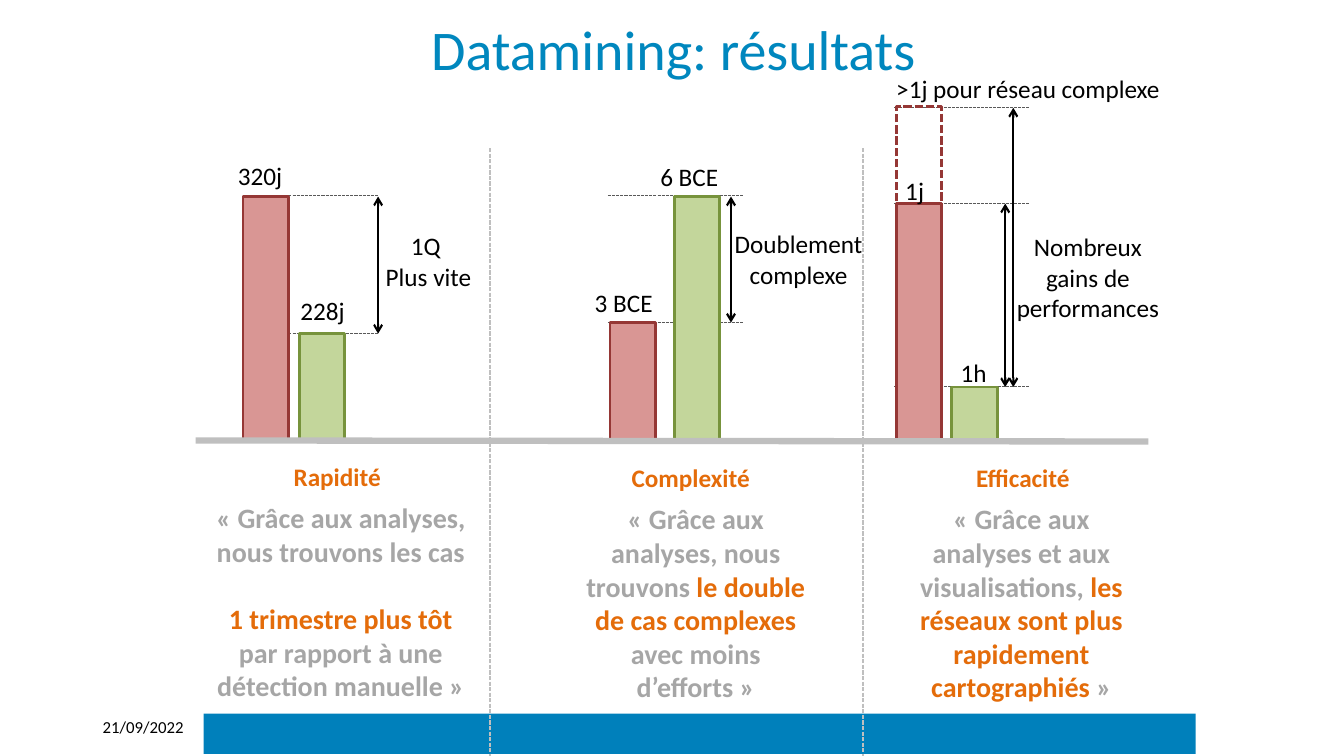
from lxml.etree import SubElement
from pptx import Presentation
from pptx.dml.color import RGBColor
from pptx.enum.dml import MSO_LINE
from pptx.enum.shapes import MSO_CONNECTOR, MSO_SHAPE
from pptx.enum.text import MSO_ANCHOR, MSO_AUTO_SIZE, PP_ALIGN
from pptx.oxml.ns import qn
from pptx.util import Inches, Pt

COLORS = {
    "title": "0087BE", "band": "0080BB", "text": "000000", "accent": "E46C0A",
    "quote": "A6A6A6", "rule": "BFBFBF", "guide": "595959",
    "before": "D99694", "before_edge": "953735",
    "after": "C3D69B", "after_edge": "77933C",
}
CELL = 0.1  # inches per grid column and row
BASE, BAR_WIDTH = 43.7, 4.5
GUIDE_WIDTH = 13.4


def color(name):
    return RGBColor.from_string(COLORS[name])


class ResultsSlide:
    """Draws on one slide; every length is in grid columns and rows."""

    def __init__(self, deck):
        self.slide = deck.slides.add_slide(deck.slide_layouts[6])
        self.font = "Calibri"

    def units(self, *lengths):
        return [Inches(length * CELL) for length in lengths]

    def rect(self, left, top, width, height, fill=None, edge=None, dashed=False):
        shape = self.slide.shapes.add_shape(
            MSO_SHAPE.RECTANGLE, *self.units(left, top, width, height))
        shape.shadow.inherit = False
        if fill:
            shape.fill.solid()
            shape.fill.fore_color.rgb = color(fill)
        else:
            shape.fill.background()
        if edge:
            shape.line.color.rgb = color(edge)
            shape.line.width = Pt(2)
            if dashed:
                shape.line.dash_style = MSO_LINE.SQUARE_DOT
        else:
            shape.line.fill.background()

    def bar(self, kind, left, top):
        self.rect(left, top, BAR_WIDTH, BASE - top, kind, f"{kind}_edge")

    def line(self, start, end, stroke, width, dashed=False, arrows=False):
        connector = self.slide.shapes.add_connector(
            MSO_CONNECTOR.STRAIGHT, *self.units(*start, *end))
        connector.line.color.rgb = color(stroke)
        connector.line.width = Pt(width)
        if dashed:
            connector.line.dash_style = MSO_LINE.SQUARE_DOT
        properties = connector.element.spPr
        if arrows:
            outline = properties.find(qn("a:ln"))
            for tip in ("a:headEnd", "a:tailEnd"):
                SubElement(outline, qn(tip), type="arrow")
        SubElement(properties, qn("a:effectLst"))

    def guide(self, left, top):
        self.line((left, top), (left + GUIDE_WIDTH, top), "guide", 0.75, dashed=True)

    def gap_arrow(self, column, top, bottom):
        self.line((column, top), (column, bottom), "text", 1.5, arrows=True)

    def text(self, box, paragraphs, size=18, ink="text", bold=False, wrap=False,
             align=PP_ALIGN.CENTER, anchor=MSO_ANCHOR.TOP, grow=True, gap=0):
        """Write paragraphs, each a string or a list of (text, colour) runs."""
        frame = self.slide.shapes.add_textbox(*self.units(*box)).text_frame
        frame.word_wrap = wrap
        frame.vertical_anchor = anchor
        frame.auto_size = MSO_AUTO_SIZE.SHAPE_TO_FIT_TEXT if grow else MSO_AUTO_SIZE.NONE
        for index, content in enumerate(paragraphs):
            paragraph = frame.add_paragraph() if index else frame.paragraphs[0]
            paragraph.alignment = align
            if index and gap:
                paragraph.space_before = Pt(gap)
            font = paragraph.font
            font.name, font.size, font.bold = self.font, Pt(size), bold
            if isinstance(content, str):
                font.color.rgb = color(ink)
                paragraph.add_run().text = content
                continue
            for words, run_ink in content:
                run = paragraph.add_run()
                run.text = words
                run.font.color.rgb = color(run_ink)


# kind, bar left and top, value, value box left, top and width
BARS = [
    ("before", 24.1, 19.5, "320j", 22.6, 15.4, 6.5),
    ("after", 29.7, 33.1, "228j", 28.8, 28.8, 6.5),
    ("before", 60.5, 32, "3 BCE", 58, 28, 7.8),
    ("after", 66.9, 19.5, "6 BCE", 64.5, 15.5, 7.8),
    ("before", 88.9, 20.2, "1j", 88.8, 16.9, 3.9),
    ("after", 94.4, 38.4, "1h", 94.3, 35, 4.6),
]
GUIDES = [(24.1, 19.4), (24.1, 33.1), (60.3, 19.4), (60.3, 32),
          (88.7, 10.7), (88.7, 20.2), (88.7, 38.3)]
GAP_ARROWS = [(37.5, 19.5, 33.1), (72.5, 19.5, 32),
              (99.7, 20.2, 38.4), (100.5, 10.7, 38.4)]
GAINS = [
    ((37.2, 22.4, 10.6, 7.1), ["1Q ", "Plus vite"], False),
    ((71.6, 22.2, 15.2, 7.1), ["Doublement", "complexe"], True),
    ((99.5, 22.5, 16.8, 10.1), ["Nombreux gains de performances"], True),
]
THEMES = [
    ("Rapidité", (28.1, 45.3, 10.7, 4), (20.4, 49.2, 26.8, 17.8), [
        "«\u00a0Grâce aux analyses, nous trouvons les cas",
        [("1 trimestre plus tôt ", "accent"),
         ("par rapport à une détection manuelle\u00a0»", "quote")]]),
    ("Complexité", (61.6, 45.4, 13.8, 4), (56.4, 49.3, 25.2, 21.2), [
        [("«\u00a0Grâce aux analyses, nous trouvons ", "quote"),
         ("le double de cas complexes ", "accent"),
         ("avec moins d’efforts\u00a0»", "quote")]]),
    ("Efficacité", (95.7, 45.4, 11.5, 4), (88.7, 49.3, 25.2, 21.2), [
        [("«\u00a0Grâce aux analyses et aux visualisations, ", "quote"),
         ("les réseaux sont plus rapidement cartographiés", "accent"),
         ("\u00a0»", "quote")]]),
]


def main():
    deck = Presentation()
    deck.slide_width, deck.slide_height = Inches(13.33), Inches(7.5)
    results = ResultsSlide(deck)

    results.rect(20.2, 70.8, 98.4, 4, "band")
    results.text((21.8, -0.3, 90, 10.1), ["Datamining: résultats"], 40, "title",
                 wrap=True, anchor=MSO_ANCHOR.MIDDLE, grow=False)
    for left, top in GUIDES:
        results.guide(left, top)
    results.rect(88.9, 10.6, BAR_WIDTH, 11.6, edge="before_edge", dashed=True)
    for kind, left, top, *_ in BARS:
        results.bar(kind, left, top)
    for column in (48.6, 85.6):
        results.line((column, 14.7), (column, 75), "rule", 1, dashed=True)
    results.line((19.4, BASE), (113.9, 43.8), "rule", 4.5)
    for gap in GAP_ARROWS:
        results.gap_arrow(*gap)

    for *_, value, left, top, width in BARS:
        results.text((left, top, width, 4), [value], align=PP_ALIGN.LEFT)
    results.text((87.9, 6.8, 29.1, 4), [">1j pour réseau complexe"], align=PP_ALIGN.LEFT)
    for box, gain, wrap in GAINS:
        results.text(box, gain, wrap=wrap)
    for heading, heading_box, quote_box, quote in THEMES:
        results.text(heading_box, [heading], ink="accent", bold=True)
        results.text(quote_box, quote, 20, "quote", bold=True, wrap=True, gap=24)
    results.text((9.2, 70.6, 12.6, 4), ["21/09/2022"], 12, wrap=True,
                 align=PP_ALIGN.LEFT, grow=False)
    deck.save("out.pptx")


if __name__ == "__main__":
    main()
